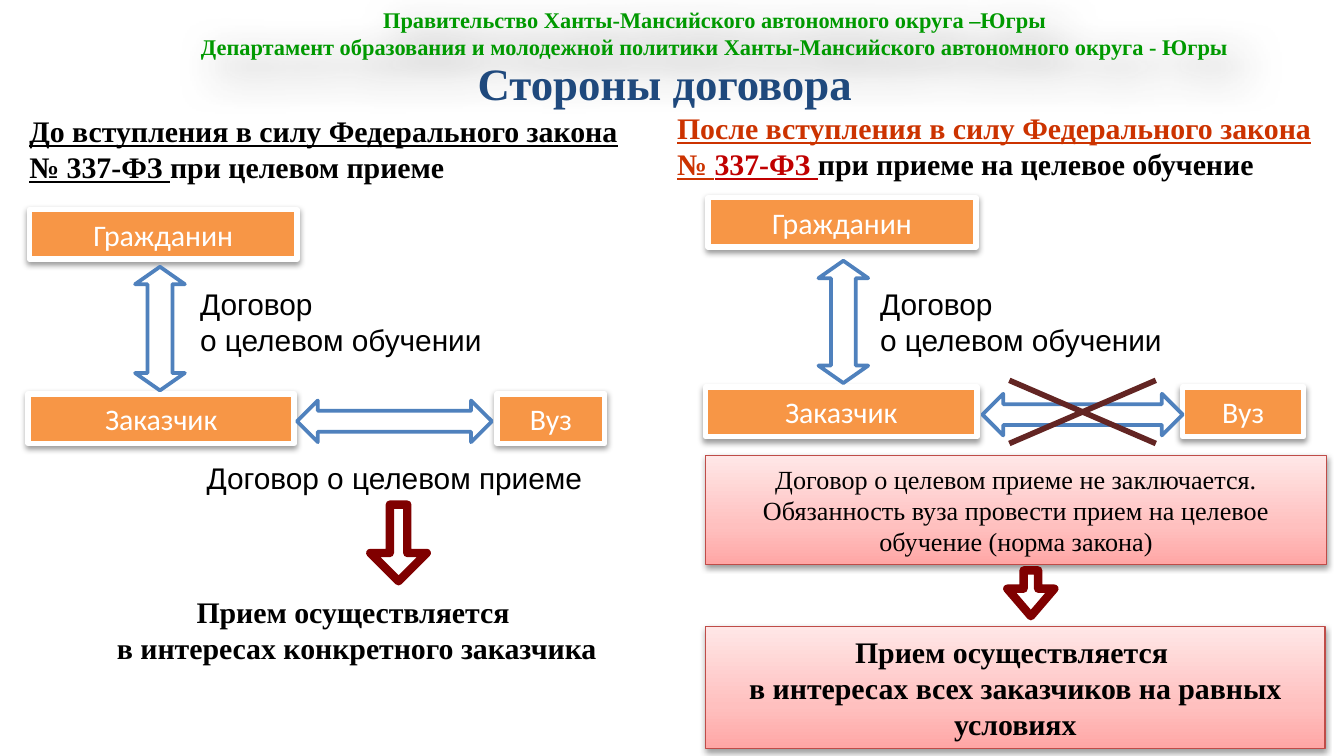
from dataclasses import dataclass

from lxml.etree import SubElement
from pptx import Presentation
from pptx.dml.color import RGBColor
from pptx.enum.shapes import MSO_CONNECTOR, MSO_SHAPE
from pptx.enum.text import MSO_ANCHOR, PP_ALIGN
from pptx.oxml.ns import qn
from pptx.util import Inches, Pt


@dataclass(frozen=True)
class Theme:
    serif: str = "Times New Roman"
    sans: str = "Arial"
    label: str = "Calibri"
    title_size: int = 24
    body_size: int = 16
    note_size: int = 14
    small_size: int = 12
    black: str = "000000"
    white: str = "FFFFFF"
    green: str = "009900"
    navy: str = "1F497D"
    orange: str = "F79646"
    blue: str = "4F81BD"
    brick: str = "CC3300"
    red: str = "C00000"
    maroon: str = "800000"
    cross: str = "632523"
    note_line: str = "BF4C48"
    note_stops: tuple = ((0, "FFA6A5"), (35, "FFC0BF"), (100, "FFE7E7"))


THEME = Theme()
COLUMNS, ROWS = 100, 56.25  # square grid cells
CELL = Inches(10) / COLUMNS


def grid(*cells):
    return [round(cell * CELL) for cell in cells]


def color(code):
    return RGBColor.from_string(code)


def write(shape, lines, font=THEME.serif, size=THEME.body_size, ink=THEME.black,
          bold=False, align=PP_ALIGN.CENTER, anchor=MSO_ANCHOR.TOP):
    """Each line is a string or a list of (text, ink, underline) spans."""
    frame = shape.text_frame
    frame.word_wrap = True
    frame.vertical_anchor = anchor
    for index, line in enumerate(lines):
        para = frame.paragraphs[0] if index == 0 else frame.add_paragraph()
        para.alignment = align
        for text, span_ink, underline in [(line, ink, False)] if isinstance(line, str) else line:
            span = para.add_run()
            span.text = text
            span.font.name, span.font.size = font, Pt(size)
            span.font.bold, span.font.underline = bold, underline
            span.font.color.rgb = color(span_ink)


def add_text(page, place, lines, **style):
    box = page.shapes.add_textbox(*grid(*place))
    write(box, lines, **style)
    return box


def cast_shadow(shape, ink=THEME.black, alpha=38, blur=3.15, distance=1.57, angle=90):
    shape.shadow.inherit = False
    effects = shape._element.spPr.find(qn("a:effectLst"))
    shadow = SubElement(effects, qn("a:outerShdw"), blurRad=str(Pt(blur)), dist=str(Pt(distance)),
                        dir=str(angle * 60000), rotWithShape="0")
    tint = SubElement(shadow, qn("a:srgbClr"), val=ink)
    SubElement(tint, qn("a:alpha"), val=str(alpha * 1000))


def add_shape(page, kind, place, fill, line, width):
    shape = page.shapes.add_shape(kind, *grid(*place))
    shape.shadow.inherit = False
    shape.fill.solid()
    shape.fill.fore_color.rgb = color(fill)
    shape.line.color.rgb = color(line)
    shape.line.width = Pt(width)
    return shape


def add_party(page, place, name):
    box = add_shape(page, MSO_SHAPE.RECTANGLE, place, THEME.orange, THEME.white, 3)
    cast_shadow(box)
    write(box, [name], font=THEME.label, ink=THEME.white, anchor=MSO_ANCHOR.MIDDLE)


def add_note(page, place, lines, **style):
    box = add_shape(page, MSO_SHAPE.RECTANGLE, place, THEME.white, THEME.note_line, 0.75)
    cast_shadow(box)
    box.fill.gradient()
    box.fill.gradient_angle = 90
    stops = box._element.spPr.find(qn("a:gradFill")).find(qn("a:gsLst"))
    for stop in list(stops):
        stops.remove(stop)
    for position, code in THEME.note_stops:
        stop = SubElement(stops, qn("a:gs"), pos=str(position * 1000))
        SubElement(stop, qn("a:srgbClr"), val=code)
    write(box, lines, anchor=MSO_ANCHOR.MIDDLE, **style)


def add_link(page, place, turn=0, head=0.5):
    arrow = add_shape(page, MSO_SHAPE.LEFT_RIGHT_ARROW, place, THEME.white, THEME.blue, 2)
    arrow.rotation = turn
    arrow.adjustments[1] = head


def add_result_arrow(page, place, head):
    arrow = add_shape(page, MSO_SHAPE.RIGHT_ARROW, place, THEME.white, THEME.maroon, 4.5)
    arrow.rotation = 90
    arrow.adjustments[0], arrow.adjustments[1] = 0.31, head


def add_cross(page, left, top, right, bottom):
    for start, end in ((top, bottom), (bottom, top)):
        stroke = page.shapes.add_connector(MSO_CONNECTOR.STRAIGHT, *grid(left, start, right, end))
        stroke.line.color.rgb = color(THEME.cross)
        stroke.line.width = Pt(3)
        SubElement(stroke._element.spPr, qn("a:effectLst"))


def add_scheme(page, citizen, customer, university, contract, upright, level):
    """Citizen above customer, university to the right, arrows between them."""
    add_text(page, contract, ["Договор", "о целевом обучении"],
             font=THEME.sans, align=PP_ALIGN.LEFT)
    for place, name in ((university, "Вуз"), (customer, "Заказчик"), (citizen, "Гражданин")):
        add_party(page, place, name)
    add_link(page, upright, turn=90, head=0.35)
    add_link(page, level)


def add_heading(page):
    banner = add_text(page, (10.9, 0, 84.6, 5), [
        "Правительство Ханты-Мансийского автономного округа –Югры",
        "Департамент образования и молодежной политики Ханты-Мансийского автономного округа - Югры",
    ], size=THEME.small_size, ink=THEME.green, bold=True)
    cast_shadow(banner, ink="333333", alpha=65, blur=23, distance=11, angle=45)
    add_text(page, (3, 3.8, 92.9, 4.7), ["Стороны договора"], size=THEME.title_size,
             ink=THEME.navy, bold=True, anchor=MSO_ANCHOR.MIDDLE)


def add_before(page):
    add_scheme(page, citizen=(2.2, 15.6, 19.9, 3.7), customer=(2.1, 29.3, 19.8, 3.7),
               university=(37, 29.3, 8, 3.7), contract=(13.9, 20.8, 27.2, 6.4),
               upright=(7.3, 22.6, 9.2, 3.7), level=(22.1, 29.8, 14.5, 3.1))
    add_text(page, (8.4, 33.7, 42.5, 3.7), ["Договор о целевом приеме "], font=THEME.sans)
    add_text(page, (1.2, 7.9, 47.1, 6.4), [[
        ("До вступления в силу Федерального закона № 337-ФЗ ", THEME.black, True),
        ("при целевом приеме", THEME.black, False),
    ]], bold=True, align=PP_ALIGN.LEFT)
    add_text(page, (3, 43.7, 47.1, 6.4),
             ["Прием осуществляется ", "в интересах конкретного заказчика"], bold=True)
    add_result_arrow(page, (26.8, 38.3, 5.7, 4.2), head=0.5)


def add_after(page):
    add_scheme(page, citizen=(52.7, 14.7, 19.9, 3.7), customer=(52.5, 28.8, 20.2, 3.7),
               university=(88, 28.8, 9, 3.7), contract=(64.5, 20.8, 26.9, 6.4),
               upright=(58.2, 22.1, 9.1, 3.7), level=(73.1, 29.3, 14.9, 3.1))
    add_cross(page, 75.1, 28.3, 86, 33)
    add_note(page, (52.5, 33.9, 46.2, 8.1), [
        "Договор о целевом приеме не заключается.",
        "Обязанность вуза провести прием на целевое обучение (норма закона)",
    ], size=THEME.note_size)
    add_text(page, (49.4, 7.7, 50.6, 6.4), [[
        ("После вступления в силу Федерального закона № ", THEME.brick, True),
        ("337-ФЗ ", THEME.red, True),
        ("при приеме на целевое обучение", THEME.black, False),
    ]], bold=True, align=PP_ALIGN.LEFT)
    add_note(page, (52.5, 46.6, 46.1, 9.1),
             ["Прием осуществляется ", "в интересах всех заказчиков на равных условиях"], bold=True)
    add_result_arrow(page, (75, 42.4, 3.4, 3.5), head=0.6)


def main():
    deck = Presentation()
    deck.slide_width, deck.slide_height = grid(COLUMNS, ROWS)
    page = deck.slides.add_slide(deck.slide_layouts[6])
    add_heading(page)
    add_before(page)
    add_after(page)
    deck.save("out.pptx")


if __name__ == "__main__":
    main()
